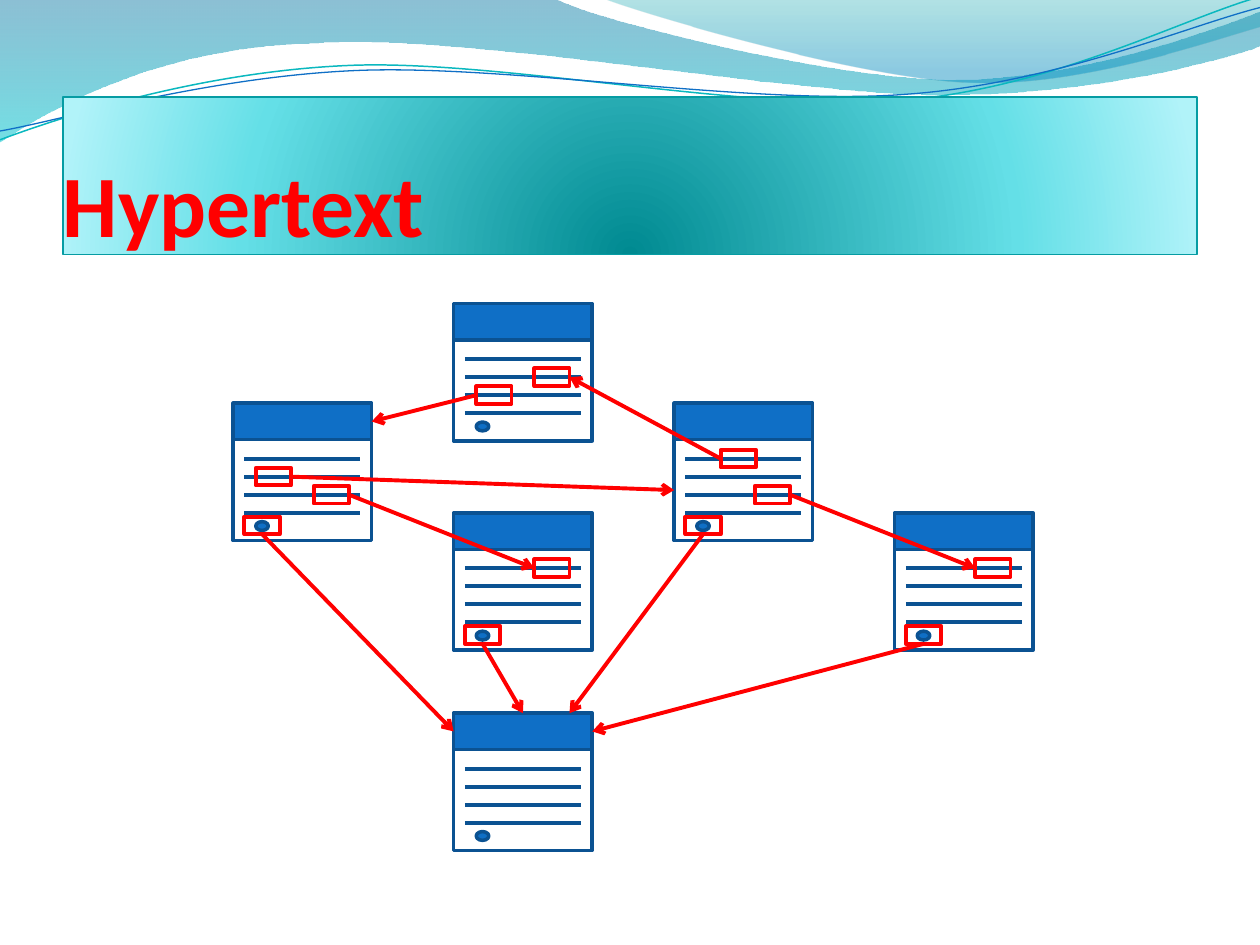
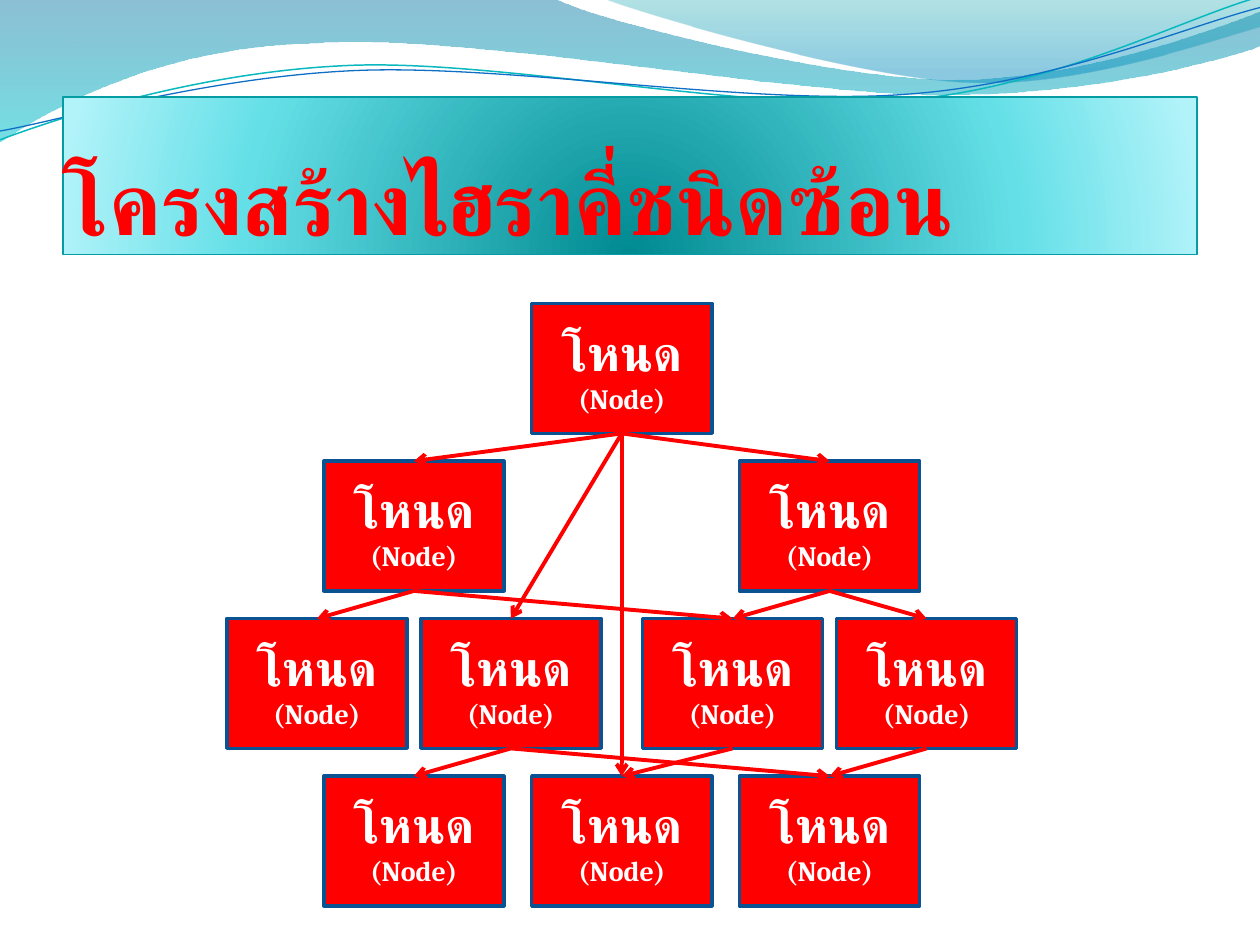
from dataclasses import dataclass

from lxml import etree
from pptx import Presentation
from pptx.dml.color import RGBColor as RGB
from pptx.enum.shapes import MSO_CONNECTOR as LINK, MSO_SHAPE as SHAPE
from pptx.enum.text import MSO_ANCHOR as ANCHOR, PP_ALIGN as ALIGN
from pptx.oxml import parse_xml
from pptx.oxml.ns import nsdecls, qn
from pptx.util import Inches, Pt


@dataclass(frozen=True)
class Theme:
    red: str = "FF0000"
    blue: str = "0F6FC6"
    navy: str = "0B5292"
    white: str = "FFFFFF"
    aqua: str = "0AB8BF"
    teal: str = "069CA3"
    head: str = "Calibri"
    body: str = "Cambria"
    title: int = 50
    node: int = 28
    note: int = 16
    edge: float = 2
    link: float = 2.25


T = Theme()
TOP, LEFT, BOTTOM, RIGHT = range(4)  # connection sites of a rectangle

# Gradient stops: position, colour, opacity
WAVE = [(0, "0074A1", 45), (100, "00C6CF", 55)]
CREST = [(0, "00A1A9", 30), (80, "008BBF", 45)]
BAND = [(0, "008A91", 100), (68, "64DFE7", 100), (100, "B1F3F9", 100)]
DOWN = '<a:lin ang="5400000" scaled="0"/>'
GLOW = ('<a:path path="circle"><a:fillToRect l="50000" t="130000" '
        'r="50000" b="-30000"/></a:path>')

# Outlines: a pair is a corner, a six-tuple is a Bezier curve
WAVE_PATH = [(0, 0), (4.4, -0.01), (4.76, 0.17, 6.64, 0.63, 7.58, 0.63),
             (8.53, 0.63, 9.58, 0.26, 10, 0.09), (10.01, 0.36),
             (9.83, 0.44, 8.7, 0.76, 7.46, 0.75),
             (6.22, 0.75, 3.82, 0.28, 2.57, 0.34),
             (1.29, 0.36, 0.46, 0.83, -0.01, 1.13), (0, 0)]
CREST_PATH = [(4.79, -0.01), (5.09, 0.11, 6.82, 0.62, 7.69, 0.65),
              (8.56, 0.69, 9.61, 0.32, 10, 0.21), (10, 0), (4.79, -0.01)]
AQUA_PATH = [(0, 1.11), (0.48, 0.93, 1.58, 0.57, 2.77, 0.52),
             (3.95, 0.47, 5.93, 0.89, 7.13, 0.8),
             (8.33, 0.71, 9.38, 0.15, 9.98, -0.02)]
BLUE_PATH = [(0, 1.04), (0.47, 0.96, 1.64, 0.61, 2.83, 0.56),
             (4.03, 0.51, 5.97, 0.84, 7.17, 0.75),
             (8.36, 0.67, 9.41, 0.21, 10, 0.06)]


def paint(shape, fill=None, line=None, width=T.edge):
    shape.shadow.inherit = False
    if fill:
        shape.fill.solid()
        shape.fill.fore_color.rgb = RGB.from_string(fill)
    else:
        shape.fill.background()
    if line:
        shape.line.color.rgb = RGB.from_string(line)
        shape.line.width = Pt(width)
    else:
        shape.line.fill.background()
    return shape


def blend(shape, stops, way):
    shape.fill.gradient()
    marks = "".join(
        f'<a:gs pos="{pos * 1000}"><a:srgbClr val="{tone}">'
        f'<a:alpha val="{alpha * 1000}"/></a:srgbClr></a:gs>'
        for pos, tone, alpha in stops)
    old = shape.fill._xPr.find(qn("a:gradFill"))
    new = parse_xml(f'<a:gradFill {nsdecls("a")} rotWithShape="1">'
                    f'<a:gsLst>{marks}</a:gsLst>{way}</a:gradFill>')
    old.getparent().replace(old, new)


def curve(slide, path, close):
    """Build the outline, then join each three curve points in one Bezier."""
    points = [(Inches(part[i]), Inches(part[i + 1]))
              for part in path for i in range(0, len(part), 2)]
    pen = slide.shapes.build_freeform(*points[0])
    pen.add_line_segments(points[1:], close=close)
    shape = pen.convert_to_shape()
    legs = iter(list(shape._element.iter(qn("a:lnTo"))))
    for part in path[1:]:
        first = next(legs)
        if len(part) == 6:
            first.tag = qn("a:cubicBezTo")
            for _ in range(2):
                leg = next(legs)
                first.append(leg[0])
                leg.getparent().remove(leg)
    return shape


def box(slide, x, y, w, h, kind=SHAPE.RECTANGLE, **look):
    shape = slide.shapes.add_shape(
        kind, Inches(x), Inches(y), Inches(w), Inches(h))
    return paint(shape, **look)


def write(para, text, font, size, tone):
    run = para.add_run()
    run.text = text
    run.font.name, run.font.size, run.font.bold = font, Pt(size), True
    run.font.color.rgb = RGB.from_string(tone)
    etree.SubElement(run.font._element, qn("a:cs"), typeface=font)


def rule(slide, x1, y1, x2, y2, tone):
    line = slide.shapes.add_connector(
        LINK.STRAIGHT, Inches(x1), Inches(y1), Inches(x2), Inches(y2))
    line.line.color.rgb = RGB.from_string(tone)
    line.line.width = Pt(T.link)
    etree.SubElement(line._element.spPr, qn("a:effectLst"))
    return line


def arrow(slide, start, out, end=None, into=TOP, spot=(0, 0)):
    """Link two shapes; without an end shape the arrow stops at spot."""
    line = rule(slide, 0, 0, *spot, T.red)
    line.begin_connect(start, out)
    if end is not None:
        line.end_connect(end, into)
    etree.SubElement(line.line._get_or_add_ln(), qn("a:tailEnd"), type="arrow")


def frame(deck, title, space=1.0):
    """Add a slide with the waves and the title band."""
    slide = deck.slides.add_slide(deck.slide_layouts[6])
    for path, stops in ((WAVE_PATH, WAVE), (CREST_PATH, CREST)):
        blend(paint(curve(slide, path, True)), stops, DOWN)
    for path, tone, width in ((AQUA_PATH, T.aqua, 0.85),
                              (BLUE_PATH, T.blue, 0.75)):
        paint(curve(slide, path, False), line=tone, width=width)

    band = box(slide, 0.5, 0.77, 9, 1.25, line=T.teal, width=0.75)
    blend(band, BAND, GLOW)
    text = band.text_frame
    text.word_wrap = True
    text.vertical_anchor = ANCHOR.BOTTOM
    text.margin_left = text.margin_right = text.margin_bottom = 0
    text.margin_top = Inches(0.05)
    para = text.paragraphs[0]
    para.alignment, para.line_spacing = ALIGN.LEFT, space
    write(para, title, T.head, T.title, T.red)
    return slide


def row_y(y, row):
    return y + 0.44 + 0.43 * row / 3


def page(slide, x, y):
    """Draw a small document; return its head and body."""
    head = box(slide, x, y, 1.1, 0.29, fill=T.blue, line=T.navy)
    body = box(slide, x, y + 0.29, 1.1, 0.8, fill=T.white, line=T.navy)
    for row in range(4):
        level = row_y(y, row)
        rule(slide, x + 0.09, level, x + 1.01, level, T.navy)
    box(slide, x + 0.18, y + 0.94, 0.1, 0.07, SHAPE.OVAL,
        fill=T.blue, line=T.navy)
    return head, body


def node(slide, x, y):
    shape = box(slide, x, y, 1.43, 1.03, fill=T.red, line=T.navy)
    text = shape.text_frame
    text.word_wrap = True
    text.vertical_anchor = ANCHOR.MIDDLE
    first, second = text.paragraphs[0], text.add_paragraph()
    first.alignment = second.alignment = ALIGN.CENTER
    write(first, "โหนด", T.body, T.node, T.white)
    write(second, "(Node)", T.body, T.note, T.white)
    return shape


def web(deck):
    slide = frame(deck, "Hypertext")
    # Documents, on columns 1.75 apart
    spots = {name: (1.85 + 1.75 * col, y) for name, col, y in (
        ("west", 0, 3.2), ("north", 1, 2.41), ("east", 2, 3.2),
        ("mid", 1, 4.07), ("far", 3, 4.07), ("home", 1, 5.66))}
    pages = {name: page(slide, *spot) for name, spot in spots.items()}
    head = {name: parts[0] for name, parts in pages.items()}

    # Link frames on text rows and around the dots
    def mark(name, dx, row):
        x, y = spots[name]
        top = y + 0.9 if row == "dot" else row_y(y, row) - 0.07
        return box(slide, x + dx, top, 0.28, 0.14, line=T.red, width=T.link)

    marks = {(name, row): mark(name, dx, row) for name, dx, row in (
        ("north", 0.18, 2), ("north", 0.64, 1), ("west", 0.18, 1),
        ("west", 0.64, 2), ("mid", 0.64, 0), ("east", 0.37, 0),
        ("east", 0.64, 2), ("far", 0.64, 0))}
    dots = {name: mark(name, 0.09, "dot")
            for name in ("west", "east", "far", "mid")}

    # Jumps between documents
    for start, out, end, into in (
            (marks["north", 2], LEFT, head["west"], RIGHT),
            (marks["east", 0], LEFT, marks["north", 1], RIGHT),
            (marks["west", 2], RIGHT, marks["mid", 0], LEFT),
            (marks["west", 1], RIGHT, pages["east"][1], LEFT),
            (dots["west"], BOTTOM, head["home"], LEFT),
            (dots["mid"], BOTTOM, head["home"], TOP),
            (dots["far"], BOTTOM, head["home"], RIGHT),
            (marks["east", 2], RIGHT, marks["far", 0], LEFT)):
        arrow(slide, start, out, end, into)
    arrow(slide, dots["east"], BOTTOM, spot=(4.52, 5.66))


def tree(deck):
    slide = frame(deck, "โครงสร้างไฮราคี่ชนิดซ้อน", 0.9)
    # Nodes by level
    levels = ((4.22,), (2.57, 5.87), (1.8, 3.34, 5.1, 6.64),
              (2.57, 4.22, 5.87))
    nodes = [[node(slide, x, 2.41 + 1.25 * level) for x in row]
             for level, row in enumerate(levels)]
    # Links: level and place of parent, then of child
    for a, i, b, j in ((0, 0, 1, 0), (0, 0, 1, 1), (0, 0, 2, 1),
                       (0, 0, 3, 1), (1, 0, 2, 0), (1, 0, 2, 2),
                       (1, 1, 2, 2), (1, 1, 2, 3), (2, 1, 3, 0),
                       (2, 1, 3, 2), (2, 2, 3, 1), (2, 3, 3, 2)):
        arrow(slide, nodes[a][i], BOTTOM, nodes[b][j])


def main():
    deck = Presentation()
    deck.slide_width, deck.slide_height = Inches(10), Inches(7.5)
    web(deck)
    tree(deck)
    deck.save("out.pptx")


if __name__ == "__main__":
    main()
